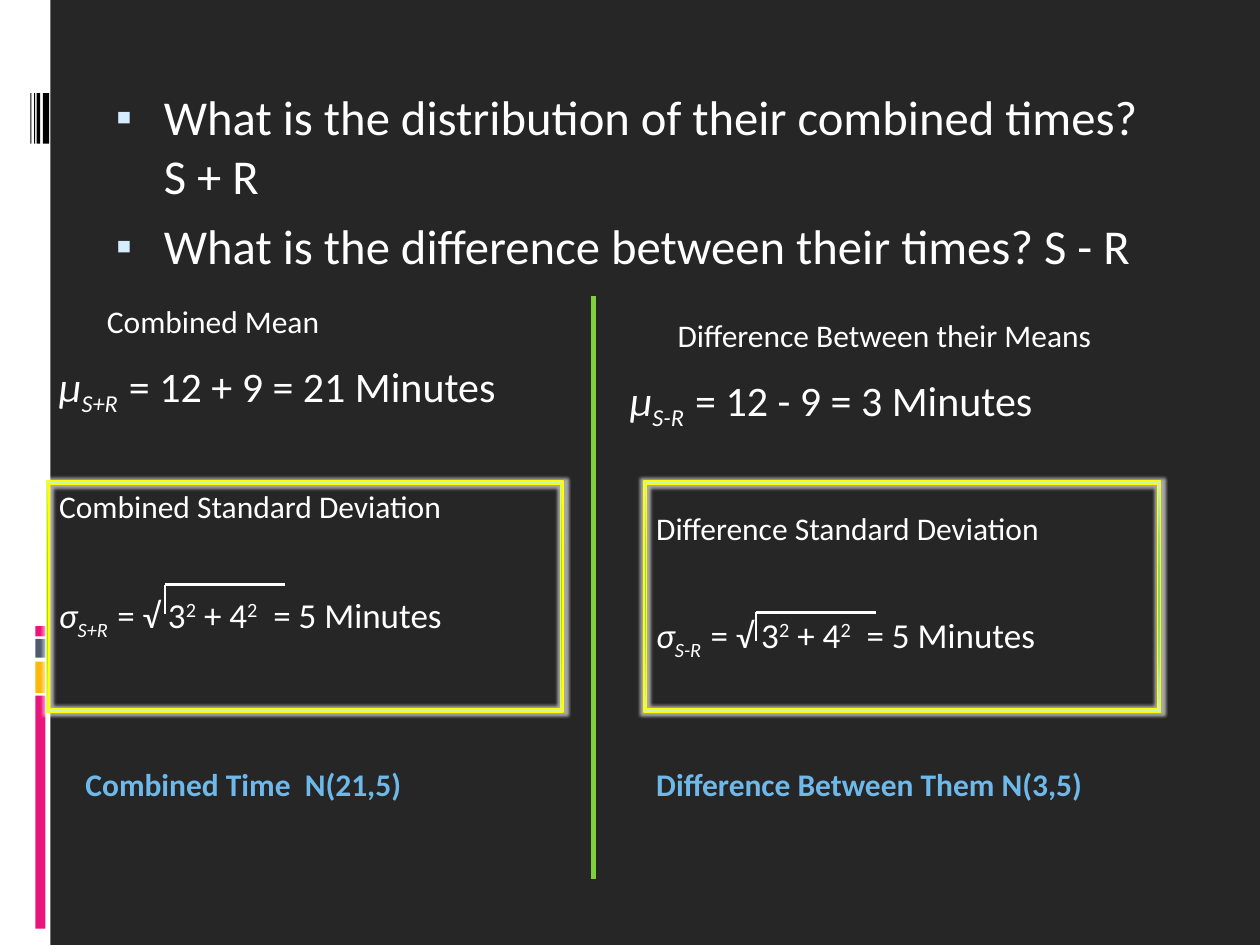
from lxml import etree
from pptx import Presentation
from pptx.dml.color import RGBColor
from pptx.enum.shapes import MSO_CONNECTOR, MSO_SHAPE
from pptx.enum.text import MSO_ANCHOR, MSO_AUTO_SIZE
from pptx.oxml import parse_xml
from pptx.oxml.ns import nsdecls, qn
from pptx.util import Inches, Pt

RECT, FRAME = MSO_SHAPE.RECTANGLE, MSO_SHAPE.FRAME
LINE = MSO_CONNECTOR.STRAIGHT
COLORS = {"back": "262626", "white": "FFFFFF", "black": "000000",
          "pink": "EA157A", "gold": "FEB80A", "slate": "4E5B6F",
          "green": "7FD13B", "blue": "6EB8EA", "yellow": "FFFF00",
          "bullet": "D6ECFF"}
RGB = {name: RGBColor.from_string(code) for name, code in COLORS.items()}


def add_text(x, y, w, h, size, runs, color="white", bold=False):
    """Add one line of text; each run is (text, baseline percent, italic)."""
    box = slide.shapes.add_textbox(Inches(x), Inches(y), Inches(w), Inches(h))
    box.text_frame.word_wrap = False
    para = box.text_frame.paragraphs[0]
    for text, base, slant in runs:
        run = para.add_run()
        run.text = text
        font = run.font
        font.name, font.size, font.bold = "Calibri", Pt(size), bold
        font.italic = slant
        font.color.rgb = RGB[color]
        if base:
            run._r.get_or_add_rPr().set("baseline", str(base * 1000))


def add_line(x1, y1, x2, y2, color, width):
    line = slide.shapes.add_connector(
        LINE, Inches(x1), Inches(y1), Inches(x2), Inches(y2))
    line.line.color.rgb = RGB[color]
    line.line.width = Pt(width)
    etree.SubElement(line._element.spPr, qn("a:effectLst"))


prs = Presentation()
prs.slide_width, prs.slide_height = Inches(10), Inches(7.5)
slide = prs.slides.add_slide(prs.slide_layouts[1])
slide.background.fill.solid()
slide.background.fill.fore_color.rgb = RGB["back"]
title = slide.shapes.title
title._element.getparent().remove(title._element)

# Questions
body = slide.placeholders[1]
body.left, body.top = Inches(0.75), Inches(0.64)
body.width, body.height = Inches(8.5), Inches(1.35)
frame = body.text_frame
frame.auto_size = MSO_AUTO_SIZE.NONE
frame.vertical_anchor = MSO_ANCHOR.TOP
frame.text = ("What is the distribution of their combined times? S + R\n"
              "What is the difference between their times? S - R")
for i, para in enumerate(frame.paragraphs):
    para.space_before = Pt(7 * i)
    props = para._p.get_or_add_pPr()
    props.set("marL", str(Inches(0.45)))
    props.set("indent", str(Inches(-0.38)))
    color = etree.SubElement(props, qn("a:buClr"))
    etree.SubElement(color, qn("a:srgbClr")).set("val", COLORS["bullet"])
    etree.SubElement(props, qn("a:buSzPct")).set("val", "95000")
    etree.SubElement(props, qn("a:buChar")).set("char", "▪")
    para.font.name, para.font.size = "Calibri", Pt(27.8)
    para.font.color.rgb = RGB["white"]

# Side strip with colour blocks and bars
strip = [(0, 0, 0.4, 7.5, "white"),
         (0.28, 5.52, 0.08, 1.85, "pink"), (0.28, 5.25, 0.08, 0.25, "gold"),
         (0.28, 5.07, 0.08, 0.15, "slate"), (0.28, 4.97, 0.08, 0.08, "pink")]
strip += [(x, 0.74, w, 0.4, "black") for x, w in
          [(0.34, 0.05), (0.29, 0.03), (0.27, 0.01), (0.24, 0.01)]]
for x, y, w, h, color in strip:
    block = slide.shapes.add_shape(
        RECT, Inches(x), Inches(y), Inches(w), Inches(h))
    block.shadow.inherit = False
    block.fill.solid()
    block.fill.fore_color.rgb = RGB[color]
    block.line.fill.background()

# Divider
add_line(4.71, 2.35, 4.71, 6.98, "green", 3.25)

# Sum and difference columns: label, text and position of each part
columns = [
    dict(sub="S+R", sum="= 12 + 9 = 21 Minutes", mu=(0.37, 2.81, 4.34),
         mean=("Combined Mean", 0.75, 2.35, 2.01),
         dev=("Combined Standard Deviation", 0.37, 3.82, 3.48),
         sigma=(0.37, 4.66), root=(1.31, 4.64), box=0.37,
         end=("Combined Time  N(21,5)", 0.58, 6.02, 2.97)),
    dict(sub="S-R", sum="= 12 - 9 = 3 Minutes", mu=(4.9, 2.92, 4.05),
         mean=("Difference Between their Means", 5.28, 2.46, 3.64),
         dev=("Difference Standard Deviation", 5.11, 3.99, 3.47),
         sigma=(5.11, 4.82), root=(6, 4.86), box=5.11,
         end=("Difference Between Them N(3,5)", 5.11, 6.02, 3.87)),
]
stops = [(0, "CCF2BB"), (25, "9CD979"), (40, "8FD562"), (50, "8DD55F"),
         (60, "8FD562"), (75, "9EDD7B"), (100, "CBF4B9")]
for col in columns:
    sub = (col["sub"] + "  ", -25, True)
    for key, color in [("mean", "white"), ("dev", "white"), ("end", "blue")]:
        text, x, y, w = col[key]
        add_text(x, y, w, 0.4, 18, [(text, 0, False)], color, key == "end")
    add_text(*col["mu"], 0.5, 24,
             [("μ", 0, True), sub, (col["sum"], 0, False)])
    add_text(*col["sigma"], 3.84, 0.44, 20,
             [("σ", 0, True), sub, ("= √ 3", 0, False), ("2", 30, False),
              (" + 4", 0, False), ("2", 30, False),
              ("  = 5 Minutes", 0, False)])

    # Root sign
    x, y = col["root"]
    add_line(x, y, x + 0.95, y, "white", 1.5)
    add_line(x, y, x, y + 0.23, "white", 1.5)

    # Glowing frame
    box = slide.shapes.add_shape(
        FRAME, Inches(col["box"]), Inches(3.82), Inches(4.1), Inches(1.83))
    box.adjustments[0] = 0.012
    box.shadow.inherit = False
    box.fill.gradient()
    box.fill.gradient_angle = 270
    ramp = box._element.spPr.find(qn("a:gradFill")).find(qn("a:gsLst"))
    for stop in list(ramp):
        ramp.remove(stop)
    for pos, code in stops:
        stop = etree.SubElement(ramp, qn("a:gs"))
        stop.set("pos", str(pos * 1000))
        etree.SubElement(stop, qn("a:srgbClr")).set("val", code)
    box.line.color.rgb = RGB["yellow"]
    box.line.width = Pt(0.94)
    box._element.spPr.find(qn("a:effectLst")).append(parse_xml(
        f'<a:glow {nsdecls("a")} rad="{Inches(0.05)}"><a:srgbClr val="FFFFFF">'
        '<a:alpha val="60000"/></a:srgbClr></a:glow>'))

prs.save("out.pptx")
